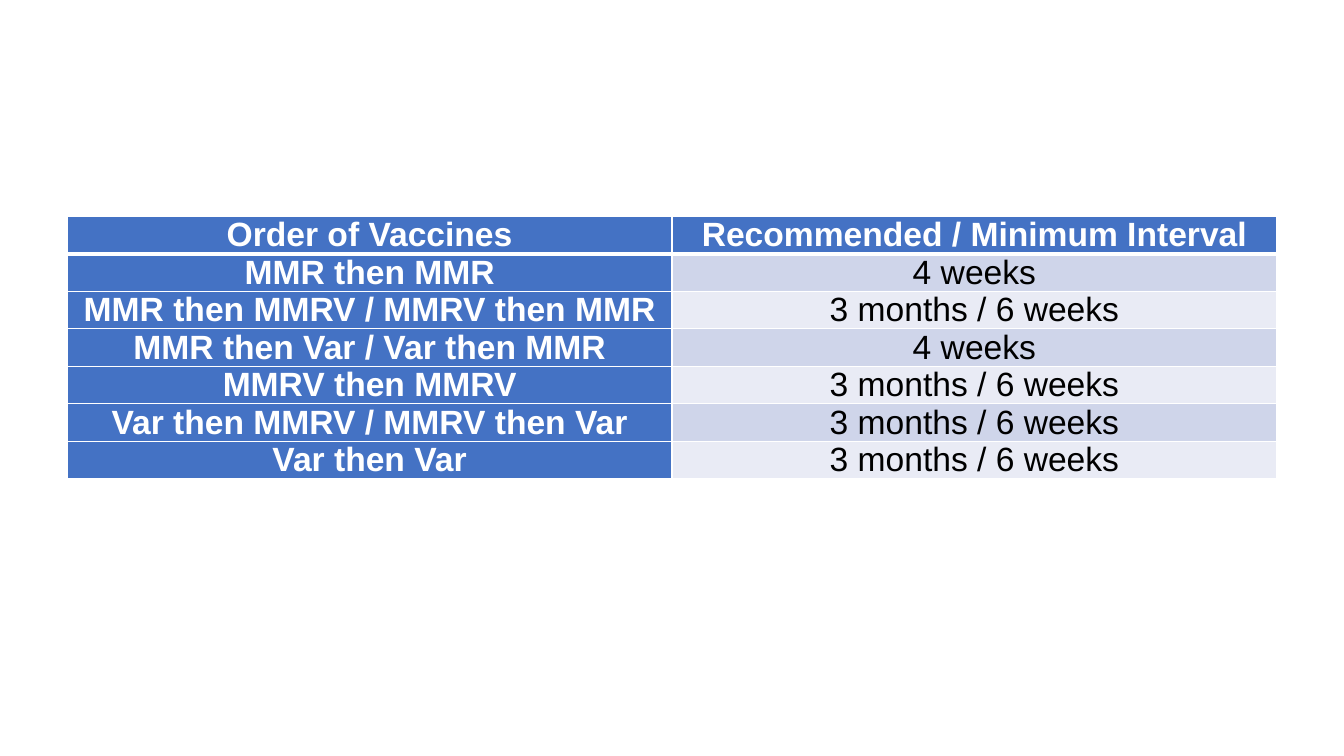
from pptx import Presentation
from pptx.dml.color import RGBColor
from pptx.enum.text import MSO_ANCHOR as Anchor, PP_ALIGN as Align
from pptx.oxml import parse_xml
from pptx.oxml.ns import nsdecls
from pptx.util import Pt

SCALE = 9525
WHITE, BLACK, BLUE = "FFFFFF", "000000", "4472C4"
BANDS = ["CFD5EA", "E9EBF5"]
ROWS = [
    ("Order of Vaccines", "Recommended / Minimum Interval"),
    ("MMR then MMR", "4 weeks"),
    ("MMR then MMRV / MMRV then MMR", "3 months / 6 weeks"),
    ("MMR then Var / Var then MMR", "4 weeks"),
    ("MMRV then MMRV", "3 months / 6 weeks"),
    ("Var then MMRV / MMRV then Var", "3 months / 6 weeks"),
    ("Var then Var", "3 months / 6 weeks"),
]


def px(n):
    return n * SCALE


def paint(code):
    return RGBColor.from_string(code)


class Sheet:
    font = "Arial"
    size = 24

    def __init__(self, deck):
        self.slide = deck.slides.add_slide(deck.slide_layouts[6])

    def table(self, rows, left, top, width, pitch):
        frame = self.slide.shapes.add_table(
            len(rows), len(rows[0]), px(left), px(top), px(width), px(pitch * len(rows)))
        grid = frame.table
        grid.first_col = True
        for r, row in enumerate(rows):
            for c, text in enumerate(row):
                head = r == 0 or c == 0
                cell = grid.cell(r, c)
                self.label(cell, text, head)
                cell.vertical_anchor = Anchor.MIDDLE if r else Anchor.TOP
                self.edge(cell, {"T": 3 if r == 1 else 1, "B": 1 if r else 3})
                cell.fill.solid()
                cell.fill.fore_color.rgb = paint(BLUE if head else BANDS[(r - 1) % 2])

    def label(self, cell, text, head):
        cell.margin_left = cell.margin_right = px(7)
        cell.margin_top = cell.margin_bottom = 0
        cell.text_frame.text = text
        para = cell.text_frame.paragraphs[0]
        para.alignment = Align.CENTER
        font = para.runs[0].font
        font.name, font.size, font.bold = self.font, Pt(self.size), head
        font.color.rgb = paint(WHITE if head else BLACK)

    def edge(self, cell, widths):
        props = cell._tc.get_or_add_tcPr()
        for side in "LRTB":
            props.append(parse_xml(
                f'<a:ln{side} {nsdecls("a")} w="{Pt(widths.get(side, 1))}">'
                f'<a:solidFill><a:srgbClr val="{WHITE}"/></a:solidFill></a:ln{side}>'))


def main():
    deck = Presentation()
    deck.slide_width, deck.slide_height = px(1280), px(720)
    Sheet(deck).table(ROWS, left=64, top=206, width=1152, pitch=35)
    deck.save("out.pptx")


if __name__ == "__main__":
    main()
